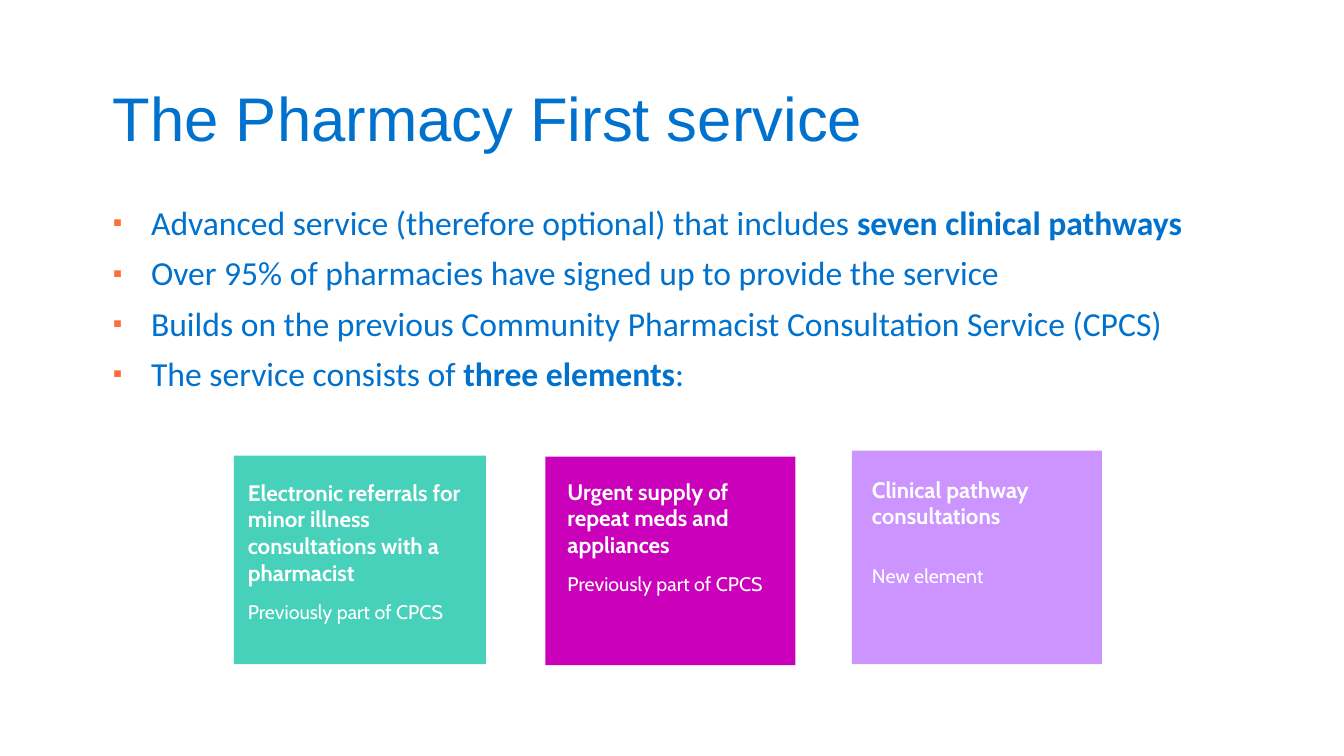
from pptx import Presentation
from pptx.dml.color import RGBColor
from pptx.enum.shapes import MSO_SHAPE
from pptx.enum.text import MSO_ANCHOR
from pptx.util import Inches, Pt
from lxml.etree import SubElement
from pptx.oxml.ns import qn

COLORS = {
    "blue": "0072CE",
    "orange": "FF6D3A",
    "teal": "47D1BA",
    "magenta": "CB00BA",
    "lilac": "CC94FF",
    "white": "FFFFFF",
}
TITLE = "The Pharmacy First service"
POINTS = [
    [("Advanced service (therefore optional) that includes ", False),
     ("seven clinical pathways", True)],
    [("Over 95% of pharmacies have signed up to provide the service", False)],
    [("Builds on the previous Community Pharmacist Consultation Service (CPCS)", False)],
    [("The service consists of ", False), ("three elements", True), (":", False)],
]
ELEMENTS = [
    {"heading": "Electronic referrals for minor illness consultations with a pharmacist",
     "status": "Previously part of CPCS", "gap": 9.7, "color": "teal",
     "card": (2.32, 4.52, 2.5, 2.07), "label": (2.36, 4.7, 2.41, 1.72)},
    {"heading": "Urgent supply of repeat meds and appliances",
     "status": "Previously part of CPCS", "gap": 9.7, "color": "magenta",
     "card": (5.41, 4.53, 2.48, 2.07), "label": (5.53, 4.69, 2.38, 1.28)},
    {"heading": "Clinical pathway consultations",
     "status": "New element", "gap": 24.3, "color": "lilac",
     "card": (8.45, 4.47, 2.48, 2.12), "label": (8.55, 4.67, 2.32, 1.38)},
]


def rgb(name):
    return RGBColor.from_string(COLORS[name])


def add_bullet(paragraph):
    properties = paragraph._p.get_or_add_pPr()
    properties.set("marL", str(Inches(0.38)))
    properties.set("indent", str(-Inches(0.38)))
    bullet_color = SubElement(properties, qn("a:buClr"))
    SubElement(bullet_color, qn("a:srgbClr"), val=COLORS["orange"])
    SubElement(properties, qn("a:buSzPct"), val="80000")
    SubElement(properties, qn("a:buFont"), typeface="Arial")
    SubElement(properties, qn("a:buChar"), char="▪")


def add_paragraph(frame, runs, size, font, color, before=0, spacing=1.0, bullet=False):
    first = not frame.paragraphs[0].runs
    paragraph = frame.paragraphs[0] if first else frame.add_paragraph()
    if bullet:
        add_bullet(paragraph)
    paragraph.line_spacing = spacing
    paragraph.space_before = Pt(0 if first else before)
    for words, bold in runs:
        run = paragraph.add_run()
        run.text = words
        run.font.size = Pt(size)
        run.font.name = font
        run.font.bold = bold
        run.font.color.rgb = rgb(color)


def add_frame(slide, place, anchor=MSO_ANCHOR.TOP):
    frame = slide.shapes.add_textbox(*map(Inches, place)).text_frame
    frame.word_wrap = True
    frame.vertical_anchor = anchor
    return frame


def add_element(slide, element):
    card = slide.shapes.add_shape(MSO_SHAPE.RECTANGLE, *map(Inches, element["card"]))
    card.shadow.inherit = False
    card.fill.solid()
    card.fill.fore_color.rgb = rgb(element["color"])
    card.line.fill.background()
    label = add_frame(slide, element["label"])
    add_paragraph(label, [(element["heading"], True)], 16, "Cabin", "white")
    add_paragraph(label, [(element["status"], False)], 14, "Cabin", "white",
                  before=element["gap"])


def main():
    deck = Presentation()
    deck.slide_width, deck.slide_height = Inches(13.33), Inches(7.5)
    slide = deck.slides.add_slide(deck.slide_layouts[6])

    title = add_frame(slide, (1.02, 0.4, 11.39, 1.45), MSO_ANCHOR.MIDDLE)
    add_paragraph(title, [(TITLE, False)], 44, "Arial", "blue", spacing=1.1)

    points = add_frame(slide, (1.02, 2, 11.39, 4.76))
    for runs in POINTS:
        add_paragraph(points, runs, 24, "Calibri", "blue",
                      before=10, spacing=0.9, bullet=True)

    for element in ELEMENTS:
        add_element(slide, element)

    deck.save("out.pptx")


if __name__ == "__main__":
    main()
